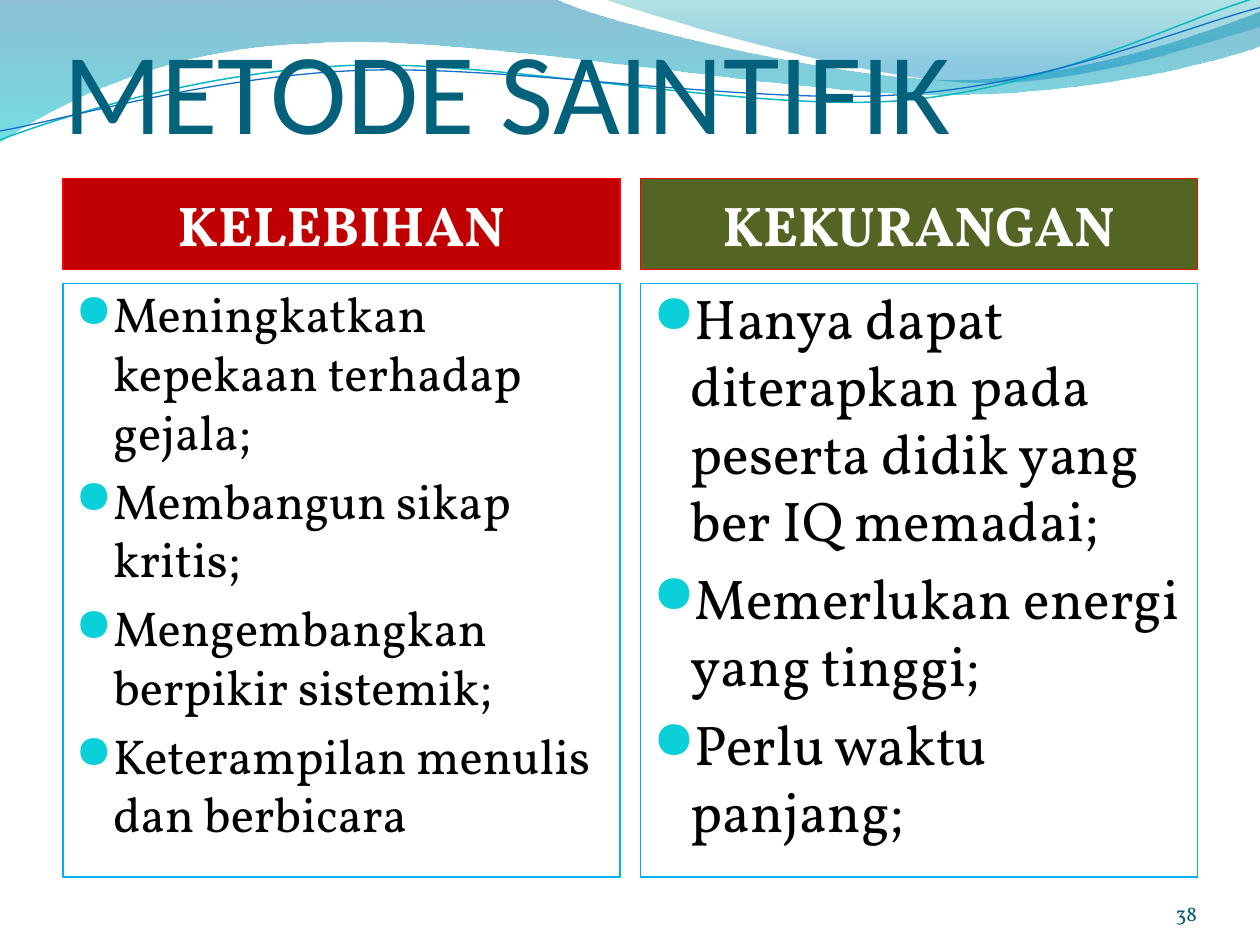
import math

import pptx
import pptx.dml.color
import pptx.enum.shapes
import pptx.enum.text
import pptx.oxml.ns
import pptx.util
from lxml import etree

Cm, Pt = pptx.util.Cm, pptx.util.Pt
ALIGN, ANCHOR = pptx.enum.text.PP_ALIGN, pptx.enum.text.MSO_ANCHOR
COLORS = {
    "title": "04617B", "red": "C00000", "olive": "546422", "white": "FFFFFF",
    "black": "000000", "header_line": "FF0000", "panel_line": "00B0F0",
    "bullet": "0BD0D9", "number": "045D75", "deep": "0074A1", "aqua": "00C6CF",
    "teal": "00A1A9", "sky": "008BBF", "thread_teal": "0AB8BF", "thread_blue": "0F6FC6",
}
BACK_WAVE = [
    [(0, 0)],
    [(4.4, -0.01)],
    [(4.76, 0.17), (6.64, 0.63), (7.58, 0.63)],
    [(8.53, 0.63), (9.58, 0.26), (10, 0.09)],
    [(10.01, 0.36)],
    [(9.83, 0.44), (8.7, 0.76), (7.46, 0.75)],
    [(6.22, 0.75), (3.82, 0.28), (2.57, 0.34)],
    [(1.29, 0.36), (0.46, 0.83), (-0.01, 1.13)],
    [(0, 0)],
]
FRONT_WAVE = [
    [(4.79, -0.01)],
    [(5.09, 0.11), (6.82, 0.62), (7.69, 0.65)],
    [(8.56, 0.69), (9.61, 0.32), (10, 0.21)],
    [(10, 0)],
    [(4.79, -0.01)],
]
TEAL_THREAD = [
    [(0, 1.11)],
    [(0.48, 0.93), (1.58, 0.57), (2.77, 0.52)],
    [(3.95, 0.47), (5.93, 0.89), (7.13, 0.8)],
    [(8.33, 0.71), (9.38, 0.15), (9.98, -0.02)],
]
BLUE_THREAD = [
    [(0, 1.04)],
    [(0.47, 0.96), (1.64, 0.61), (2.83, 0.56)],
    [(4.03, 0.51), (5.97, 0.84), (7.17, 0.75)],
    [(8.36, 0.67), (9.41, 0.21), (10, 0.06)],
]
COLUMNS = [
    ("KELEBIHAN", "red", 28, [
        "Meningkatkan kepekaan terhadap gejala;",
        "Membangun sikap kritis;",
        "Mengembangkan berpikir sistemik;",
        "Keterampilan menulis dan berbicara",
    ]),
    ("KEKURANGAN", "olive", 32, [
        "Hanya dapat diterapkan pada peserta didik yang ber IQ memadai;",
        "Memerlukan energi yang tinggi;",
        "Perlu waktu panjang;",
    ]),
]


def rgb(name):
    """Return the named palette colour."""
    return pptx.dml.color.RGBColor.from_string(COLORS[name])


def add_child(parent, tag, **attributes):
    """Append a DrawingML element to its parent."""
    return etree.SubElement(parent, pptx.oxml.ns.qn(tag), attributes)


def add_bullet(paragraph):
    """Give a paragraph a hanging round bullet."""
    properties = paragraph._p.get_or_add_pPr()
    properties.set("marL", str(Cm(0.76)))
    properties.set("indent", str(-Cm(0.76)))
    add_child(add_child(properties, "a:buClr"), "a:srgbClr", val=COLORS["bullet"])
    add_child(properties, "a:buSzPct", val="95000")
    add_child(properties, "a:buFont", typeface="OpenSymbol")
    add_child(properties, "a:buChar", char="●")


def write_text(shape, lines, size, color, font="Vollkorn", bold=False, align=ALIGN.LEFT,
               anchor=ANCHOR.TOP, insets=(0, 0, 0, 0), before=0, bullets=False):
    """Fill a shape with formatted paragraphs; insets run left, top, right, bottom."""
    frame = shape.text_frame
    frame.word_wrap = True
    frame.auto_size = pptx.enum.text.MSO_AUTO_SIZE.NONE
    frame.vertical_anchor = anchor
    (frame.margin_left, frame.margin_top,
     frame.margin_right, frame.margin_bottom) = map(Cm, insets)
    for index, line in enumerate(lines):
        paragraph = frame.add_paragraph() if index else frame.paragraphs[0]
        paragraph.alignment = align
        paragraph.space_before = Pt(before)
        if bullets:
            add_bullet(paragraph)
        run = paragraph.add_run()
        run.text = line
        run.font.name, run.font.size, run.font.bold = font, Pt(size), bold
        run.font.color.rgb = rgb(color)


def turn(point, degrees, center):
    """Turn a point clockwise about a center."""
    cos, sin = math.cos(math.radians(degrees)), math.sin(math.radians(degrees))
    dx, dy = point[0] - center[0], point[1] - center[1]
    return center[0] + dx * cos - dy * sin, center[1] + dx * sin + dy * cos


class SlideMaker:
    """Holds the slide and draws its elements in one style."""

    def __init__(self, slide):
        """Keep the slide to draw on."""
        self.slide = slide

    def curve(self, segments, closed):
        """Draw an outline of lines and cubic curves given in inches."""
        segments = [[(Cm(2.54 * x), Cm(2.54 * y)) for x, y in segment] for segment in segments]
        (start,), *rest = segments
        builder = self.slide.shapes.build_freeform(*start)
        builder.add_line_segments([segment[-1] for segment in rest], close=closed)
        outline = builder.convert_to_shape()
        outline.shadow.inherit = False
        steps = list(outline._element.iter(pptx.oxml.ns.qn("a:lnTo")))
        for step, (*controls, _) in zip(steps, rest):
            if controls:
                end = step[0]
                step.tag = pptx.oxml.ns.qn("a:cubicBezTo")
                for x, y in controls:
                    add_child(step, "a:pt", x=str(x - outline.left), y=str(y - outline.top))
                step.append(end)
        return outline

    def wave(self, segments, stops):
        """Draw a translucent wave shaded from top to bottom."""
        band = self.curve(segments, True)
        band.line.fill.background()
        band.fill.gradient()
        band.fill.gradient_angle = 270
        for stop, (position, color, _) in zip(band.fill.gradient_stops, stops):
            stop.position = position
            stop.color.rgb = rgb(color)
        shades = band._element.iter(pptx.oxml.ns.qn("a:srgbClr"))
        for shade, (_, _, opacity) in zip(shades, stops):
            add_child(shade, "a:alpha", val=str(opacity * 1000))

    def thread(self, segments, color, width, center, tilt=2.7):
        """Draw a thin curve, levelled first and then tilted as a shape."""
        level = [[turn(point, tilt, center) for point in segment] for segment in segments]
        strand = self.curve(level, False)
        strand.rotation = 360 - tilt
        strand.fill.background()
        strand.line.color.rgb = rgb(color)
        strand.line.width = Pt(width)

    def title(self, text):
        """Place the title above the waves."""
        heading = self.slide.shapes.title
        heading.left, heading.top, heading.width, heading.height = map(Cm, (1.27, 1.27, 22.86, 1.9))
        heading._element.getparent().append(heading._element)
        write_text(heading, [text], 66, "title", font="Calibri",
                   anchor=ANCHOR.BOTTOM, insets=(0, 0.13, 0, 0))

    def box(self, left, top, width, height, line, fill=None):
        """Draw an outlined rectangle."""
        panel = self.slide.shapes.add_shape(
            pptx.enum.shapes.MSO_SHAPE.RECTANGLE, *map(Cm, (left, top, width, height)))
        panel.shadow.inherit = False
        panel.line.color.rgb = rgb(line)
        panel.line.width = Pt(0.75)
        if fill:
            panel.fill.solid()
            panel.fill.fore_color.rgb = rgb(fill)
        else:
            panel.fill.background()
        return panel

    def column(self, left, heading, fill, size, points):
        """Draw a heading with its list below."""
        header = self.box(left, 3.6, 11.23, 1.83, "header_line", fill)
        write_text(header, [heading], 32, "white", bold=True, align=ALIGN.CENTER,
                   anchor=ANCHOR.MIDDLE, insets=(0.13, 0, 0.13, 0), before=6.4)
        panel = self.box(left, 5.72, 11.23, 11.96, "panel_line")
        write_text(panel, points, size, "black", insets=(0.25, 0, 0.25, 0.13),
                   before=size * 0.2, bullets=True)

    def number(self, text):
        """Write the slide number."""
        label = self.slide.shapes.add_textbox(*map(Cm, (22.02, 17.65, 2.11, 1.02)))
        write_text(label, [text], 12, "number", align=ALIGN.RIGHT, anchor=ANCHOR.BOTTOM)


def main():
    """Build and save the slide."""
    deck = pptx.Presentation()
    deck.slide_width, deck.slide_height = Cm(25.4), Cm(19.05)
    maker = SlideMaker(deck.slides.add_slide(deck.slide_layouts[5]))
    maker.wave(BACK_WAVE, [(0, "deep", 45), (1, "aqua", 55)])
    maker.wave(FRONT_WAVE, [(0, "teal", 30), (0.8, "sky", 45)])
    maker.thread(TEAL_THREAD, "thread_teal", 0.85, center=(4.99, 0.57))
    maker.thread(BLUE_THREAD, "thread_blue", 0.75, center=(5, 0.59))
    maker.title("METODE SAINTIFIK")
    for index, content in enumerate(COLUMNS):
        maker.column(1.27 + index * 11.64, *content)
    maker.number("38")
    deck.save("out.pptx")


if __name__ == "__main__":
    main()
